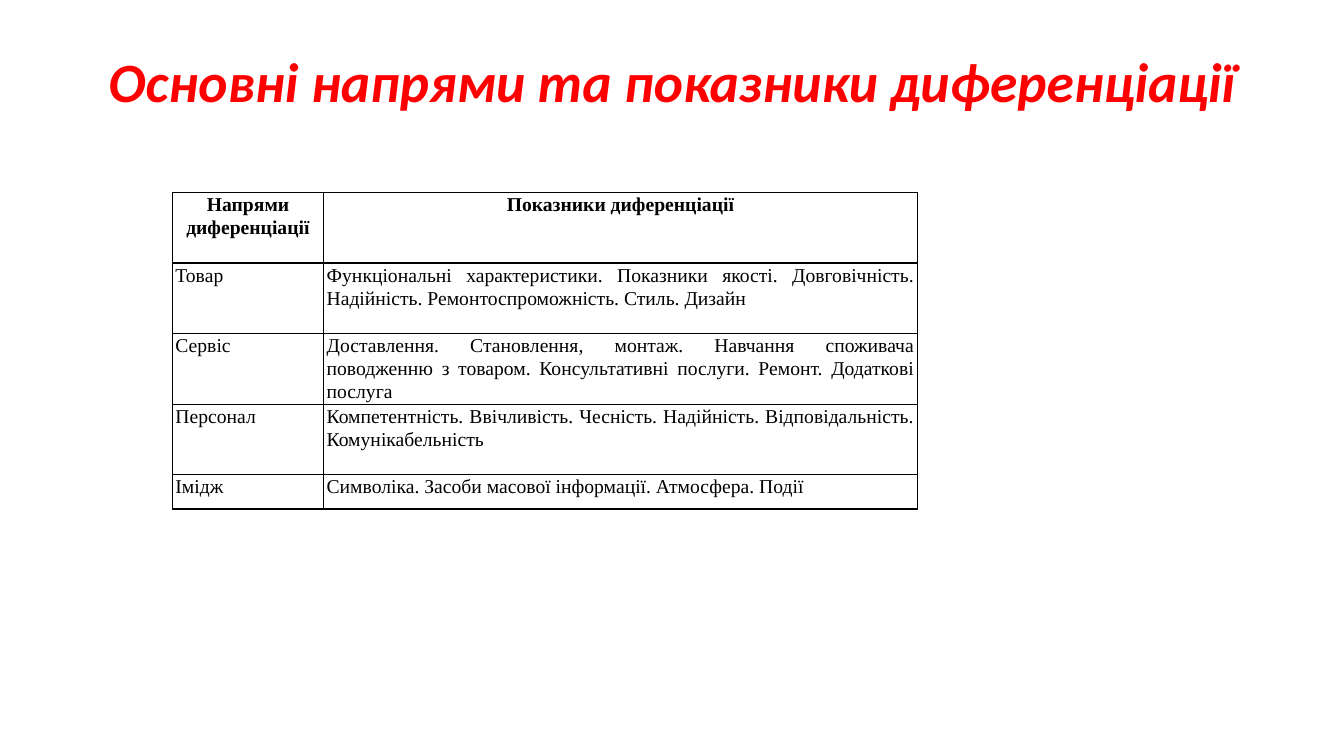
from dataclasses import dataclass

from lxml import etree
from pptx import Presentation
from pptx.dml.color import RGBColor
from pptx.enum.text import MSO_ANCHOR, MSO_AUTO_SIZE, PP_ALIGN
from pptx.oxml.ns import qn
from pptx.util import Inches, Pt

CENTER = PP_ALIGN.CENTER
JUSTIFY = PP_ALIGN.JUSTIFY
MIDDLE = MSO_ANCHOR.MIDDLE
TOP = MSO_ANCHOR.TOP
NO_AUTOFIT = MSO_AUTO_SIZE.NONE
TITLE_ONLY = 5


@dataclass(frozen=True)
class Theme:
    title_font: str = "Calibri"
    table_font: str = "Times New Roman"
    title_size: float = 39.6
    table_size: float = 14
    title_color: str = "FF0000"
    ink: str = "000000"
    border_width: float = 1


class DifferentiationSlide:
    def __init__(self, presentation, theme):
        self.theme = theme
        self.slide = presentation.slides.add_slide(presentation.slide_layouts[TITLE_ONLY])

    def add_run(self, paragraph, text, font, size, color, bold=False, italic=False):
        run = paragraph.add_run()
        run.text = text
        run.font.name = font
        run.font.size = Pt(size)
        run.font.bold = bold
        run.font.italic = italic
        run.font.color.rgb = RGBColor.from_string(color)

    def add_title(self, text, left, top, width, height):
        title = self.slide.shapes.title
        title.left, title.top = Inches(left), Inches(top)
        title.width, title.height = Inches(width), Inches(height)
        frame = title.text_frame
        frame.auto_size = NO_AUTOFIT
        frame.word_wrap = True
        frame.vertical_anchor = MIDDLE
        frame.margin_left = frame.margin_right = 0
        paragraph = frame.paragraphs[0]
        paragraph.alignment = CENTER
        paragraph.line_spacing = 0.9
        self.add_run(paragraph, text, self.theme.title_font, self.theme.title_size,
                     self.theme.title_color, bold=True, italic=True)

    def add_borders(self, cell):
        properties = cell._tc.get_or_add_tcPr()
        for position, side in enumerate(("a:lnL", "a:lnR", "a:lnT", "a:lnB")):
            border = etree.Element(qn(side), w=str(Pt(self.theme.border_width)))
            fill = etree.SubElement(border, qn("a:solidFill"))
            etree.SubElement(fill, qn("a:srgbClr"), val=self.theme.ink)
            properties.insert(position, border)

    def fill_cell(self, cell, text, header):
        cell.margin_left = cell.margin_right = Inches(0.03)
        cell.margin_top = cell.margin_bottom = 0
        cell.vertical_anchor = TOP
        cell.fill.background()
        self.add_borders(cell)
        paragraph = cell.text_frame.paragraphs[0]
        paragraph.alignment = CENTER if header else JUSTIFY
        paragraph.line_spacing = 1.07
        self.add_run(paragraph, text, self.theme.table_font, self.theme.table_size,
                     self.theme.ink, bold=header)

    def add_table(self, rows, left, top, column_widths, row_heights):
        table = self.slide.shapes.add_table(
            len(rows), len(column_widths), Inches(left), Inches(top),
            Inches(sum(column_widths)), Inches(sum(row_heights))).table
        table.horz_banding = False
        for column, width in zip(table.columns, column_widths):
            column.width = Inches(width)
        for row_index, (texts, height) in enumerate(zip(rows, row_heights)):
            table.rows[row_index].height = Inches(height)
            for column_index, text in enumerate(texts):
                self.fill_cell(table.cell(row_index, column_index), text, row_index == 0)


DIRECTIONS = [
    ("Напрями диференціації", "Показники диференціації"),
    ("Товар", "Функціональні характеристики. Показники якості. Довговічність. "
              "Надійність. Ремонтоспроможність. Стиль. Дизайн"),
    ("Сервіс", "Доставлення. Становлення, монтаж. Навчання споживача поводженню "
               "з товаром. Консультативні послуги. Ремонт. Додаткові послуга"),
    ("Персонал", "Компетентність. Ввічливість. Чесність. Надійність. "
                 "Відповідальність. Комунікабельність"),
    ("Імідж", "Символіка. Засоби масової інформації. Атмосфера. Події"),
]


def main():
    presentation = Presentation()
    presentation.slide_width = Inches(13.33)
    presentation.slide_height = Inches(7.5)
    page = DifferentiationSlide(presentation, Theme())
    page.add_title("Основні напрями та показники диференціації", 0.92, 0.4, 11.5, 0.87)
    page.add_table(DIRECTIONS, 1.71, 1.91, [1.5, 5.89], [0.7] * 4 + [0.34])
    presentation.save("out.pptx")


if __name__ == "__main__":
    main()
